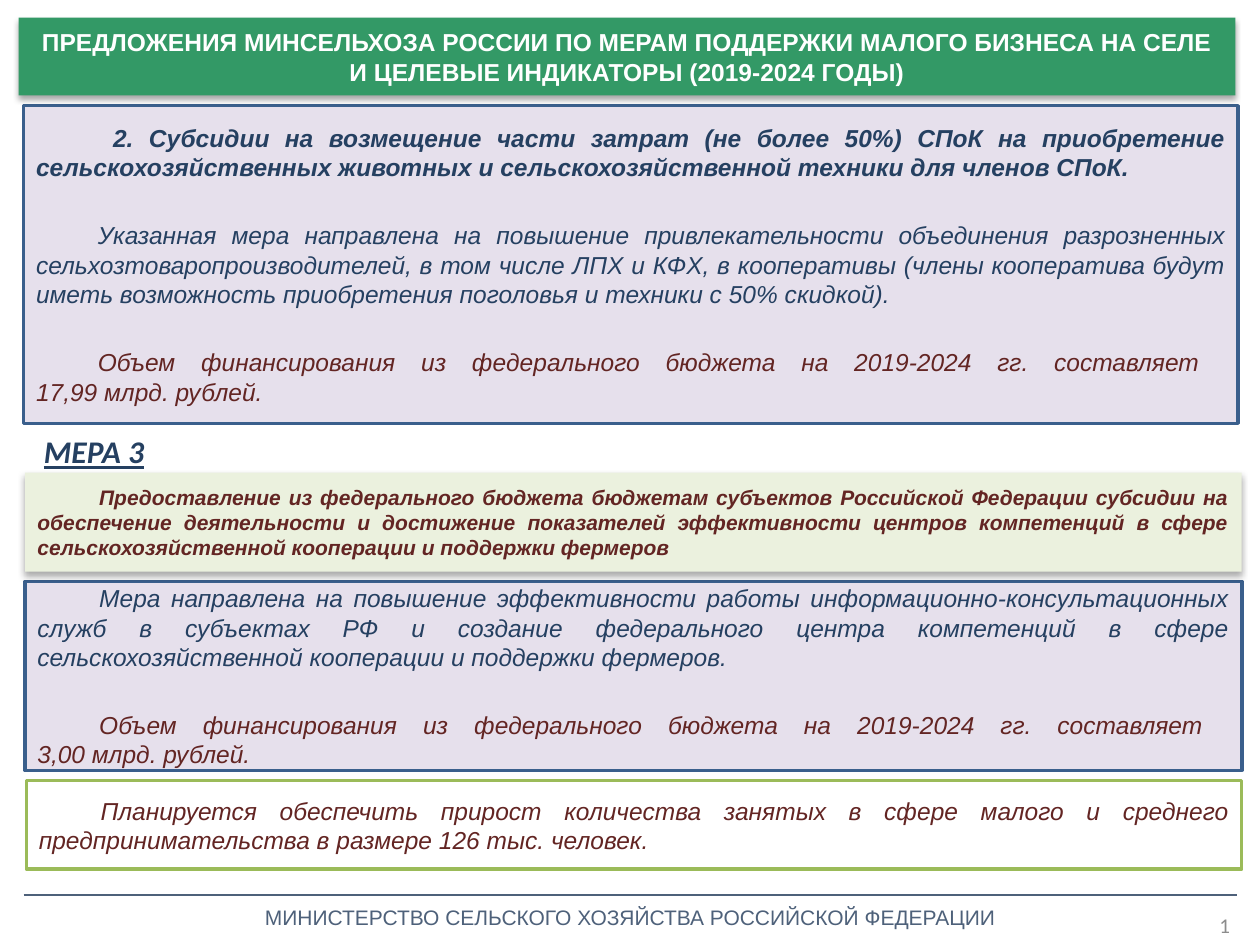
import pptx
import pptx.util
import pptx.dml.color
import pptx.enum.shapes
import pptx.enum.text
import pptx.oxml
import pptx.oxml.ns
from lxml import etree

Pt = pptx.util.Pt
ALIGN = pptx.enum.text.PP_ALIGN
ANCHOR = pptx.enum.text.MSO_ANCHOR

NAVY, MAROON, SLATE, GREY = "254061", "632523", "4E617A", "8C8C8C"
LILAC, BLUE, GREEN, OLIVE = "E6E0EC", "3A5F8C", "339966", "9BBB59"
PALE_GREEN, WHITE = "EBF1DE", "FFFFFF"
INDENT = 35.3
SECTION_GAP = 22


def rgb(value):
    return pptx.dml.color.RGBColor.from_string(value)


def qn(tag):
    return pptx.oxml.ns.qn(tag)


def add_shadow(s, alpha, blur, dist):
    """Give a shape a soft black shadow that falls straight down."""
    effects = s._element.spPr.find(qn("a:effectLst"))
    shadow = etree.SubElement(effects, qn("a:outerShdw"), blurRad=str(Pt(blur)),
                              dist=str(Pt(dist)), dir="5400000", rotWithShape="0")
    color = etree.SubElement(shadow, qn("a:srgbClr"), val="000000")
    etree.SubElement(color, qn("a:alpha"), val=str(alpha * 1000))


def add_panel(shapes, left, top, width, height, fill, line=None):
    s = shapes.add_shape(pptx.enum.shapes.MSO_SHAPE.RECTANGLE,
                         Pt(left), Pt(top), Pt(width), Pt(height))
    s.shadow.inherit = False
    s.fill.solid()
    s.fill.fore_color.rgb = rgb(fill)
    if line:
        s.line.color.rgb = rgb(line)
        s.line.width = Pt(2)
    else:
        s.line.fill.background()
    s.text_frame.word_wrap = True
    s.text_frame.vertical_anchor = ANCHOR.MIDDLE
    return s


def add_label(shapes, left, top, width, height):
    s = shapes.add_textbox(Pt(left), Pt(top), Pt(width), Pt(height))
    s.text_frame.word_wrap = True
    return s


def style(font, size, color, name="Arial", bold=False, italic=False):
    font.name = name
    font.size = Pt(size)
    font.color.rgb = rgb(color)
    font.bold = bold
    font.italic = italic


def write(s, text, size, color, align, **look):
    p = s.text_frame.paragraphs[0]
    p.text = text
    p.alignment = align
    for r in p.runs:
        style(r.font, size, color, **look)
    return p


def write_body(s, paragraphs, size=14):
    """Fill a panel with justified italic (text, colour, bold, indent) paragraphs."""
    tf = s.text_frame
    for i, (text, color, bold, indent) in enumerate(paragraphs):
        p = tf.paragraphs[0] if i == 0 else tf.add_paragraph()
        p.text = text
        p.alignment = ALIGN.JUSTIFY
        p._p.get_or_add_pPr().set("indent", str(Pt(indent)))
        if i:
            p.space_before = Pt(SECTION_GAP)
        for r in p.runs:
            style(r.font, size, color, bold=bold, italic=True)


def add_footer(shapes):
    group = shapes.add_group_shape().shapes
    s = add_label(group, 28, 513.4, 664.5, 21.6)
    write(s, "МИНИСТЕРСТВО СЕЛЬСКОГО ХОЗЯЙСТВА РОССИЙСКОЙ ФЕДЕРАЦИИ",
          12, SLATE, ALIGN.CENTER)
    rule = group.add_connector(pptx.enum.shapes.MSO_CONNECTOR.STRAIGHT,
                               Pt(13.5), Pt(511.6), Pt(707), Pt(511.6))
    rule.line.color.rgb = rgb(SLATE)
    rule.line.width = Pt(1)
    etree.SubElement(rule._element.spPr, qn("a:effectLst"))


def add_slide_number(shapes, number):
    s = add_label(shapes, 653, 514.2, 57, 28.8)
    s.text_frame.vertical_anchor = ANCHOR.MIDDLE
    p = write(s, number, 12, GREY, ALIGN.RIGHT, name="Calibri")
    r = p.runs[0]._r
    field = etree.SubElement(p._p, qn("a:fld"), type="slidenum",
                             id="{B6F15528-21DE-4FAA-801E-634DDDAF4B2B}")
    field.extend(list(r))
    p._p.remove(r)


def funding(amount):
    return ("Объем финансирования из федерального бюджета на 2019-2024 гг. "
            f"составляет \n{amount} млрд. рублей.", MAROON, False, INDENT)


def main():
    prs = pptx.Presentation()
    prs.slide_width, prs.slide_height = Pt(720), Pt(540)
    shapes = prs.slides.add_slide(prs.slide_layouts[6]).shapes

    subsidy = add_panel(shapes, 13.5, 60.4, 694, 181.5, LILAC, BLUE)
    write_body(subsidy, [
        ("2. Субсидии на возмещение части затрат (не более 50%) СПоК на "
         "приобретение сельскохозяйственных животных и сельскохозяйственной "
         "техники для членов СПоК.", NAVY, True, 44),
        ("Указанная мера направлена на повышение привлекательности объединения "
         "разрозненных сельхозтоваропроизводителей, в том числе ЛПХ и КФХ, в "
         "кооперативы (члены кооператива будут иметь возможность приобретения "
         "поголовья и техники с 50% скидкой).", NAVY, False, INDENT),
        funding("17,99"),
    ])

    add_footer(shapes)
    add_slide_number(shapes, "5")

    title = add_panel(shapes, 10.6, 10, 695.3, 44.6, GREEN)
    add_shadow(title, 35, 3.1, 1.8)
    write(title, "ПРЕДЛОЖЕНИЯ МИНСЕЛЬХОЗА РОССИИ ПО МЕРАМ ПОДДЕРЖКИ МАЛОГО "
          "БИЗНЕСА НА СЕЛЕ И ЦЕЛЕВЫЕ ИНДИКАТОРЫ (2019-2024 ГОДЫ)",
          14, WHITE, ALIGN.CENTER, bold=True)

    purpose = add_panel(shapes, 14.3, 332.3, 695.3, 108, LILAC, BLUE)
    write_body(purpose, [
        ("Мера направлена на повышение эффективности работы "
         "информационно-консультационных служб в субъектах РФ и создание "
         "федерального центра компетенций в сфере сельскохозяйственной "
         "кооперации и поддержки фермеров.", NAVY, False, INDENT),
        funding("3,00"),
    ])

    measure = add_panel(shapes, 14.3, 270, 695.3, 56.6, PALE_GREEN)
    add_shadow(measure, 32, 3.5, 2.2)
    write_body(measure, [
        ("Предоставление из федерального бюджета бюджетам субъектов Российской "
         "Федерации субсидии на обеспечение деятельности и достижение "
         "показателей эффективности центров компетенций в сфере "
         "сельскохозяйственной кооперации и поддержки фермеров",
         MAROON, True, INDENT),
    ], size=12)

    heading = add_panel(shapes, 18, 247.7, 212.4, 20.2, WHITE)
    p = write(heading, "МЕРА 3", 18, NAVY, ALIGN.LEFT,
              name="Calibri", bold=True, italic=True)
    p.runs[0].font.underline = True

    target = add_panel(shapes, 15.1, 446.1, 694.5, 50.6, WHITE, OLIVE)
    write_body(target, [
        ("Планируется обеспечить прирост количества занятых в сфере малого и "
         "среднего предпринимательства в размере 126 тыс. человек.",
         MAROON, False, INDENT),
    ])

    prs.save("out.pptx")


if __name__ == "__main__":
    main()
